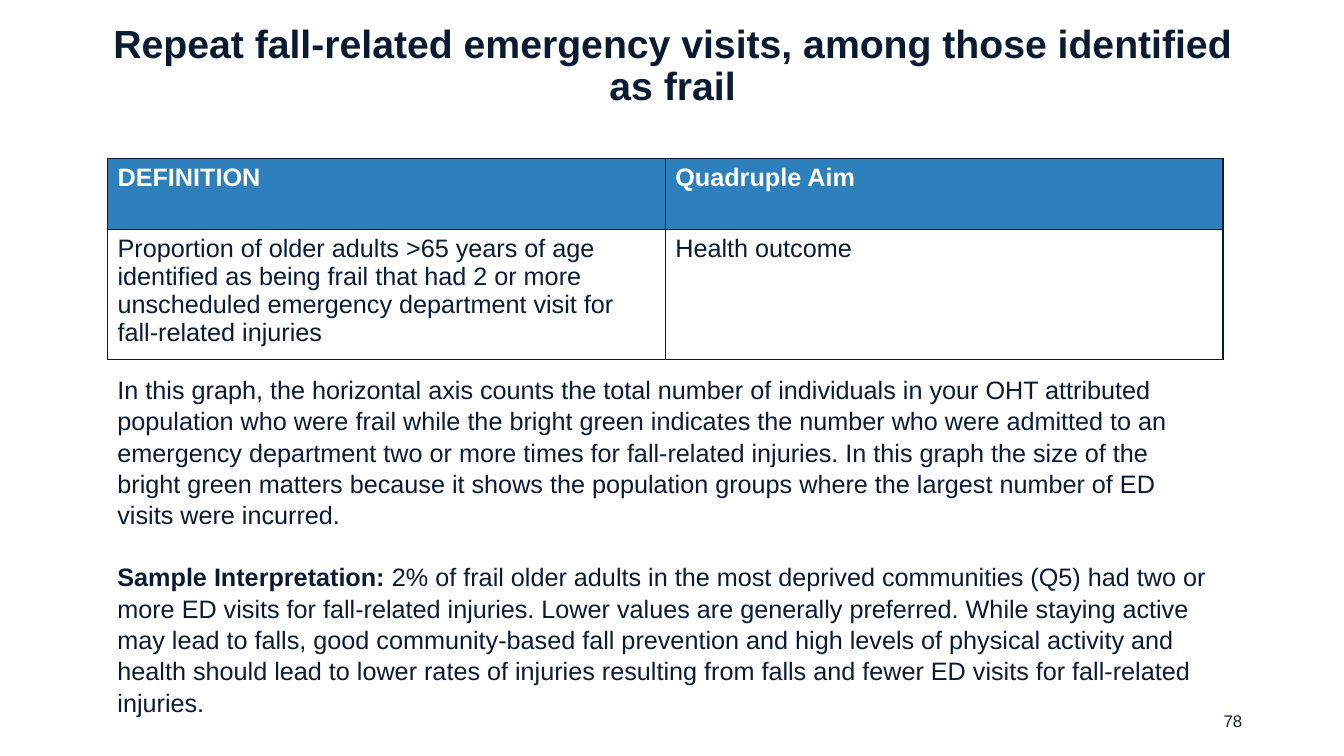
"""Build the slide on repeat fall-related emergency visits among frail older adults."""

import dataclasses
import typing

import lxml.etree
import pptx
import pptx.dml.color
import pptx.enum.text
import pptx.oxml.ns
import pptx.util

SLIDE_WIDTH = pptx.util.Inches(13.33)
SLIDE_HEIGHT = pptx.util.Inches(7.5)
NAVY = "0A1A31"
BLUE = "2E80BC"
WHITE = "FFFFFF"
FONT = "Arial"
BORDER_POINTS = 1
ALIGN = pptx.enum.text.PP_ALIGN
ANCHOR = pptx.enum.text.MSO_ANCHOR


@dataclasses.dataclass(frozen=True)
class Box:
    """A rectangle in percent of the slide's width and height."""

    left: float
    top: float
    width: float
    height: float

    def lengths(self) -> tuple[int, int, int, int]:
        """Return left, top, width and height as slide lengths."""
        return (
            round(SLIDE_WIDTH * self.left / 100),
            round(SLIDE_HEIGHT * self.top / 100),
            round(SLIDE_WIDTH * self.width / 100),
            round(SLIDE_HEIGHT * self.height / 100),
        )


@dataclasses.dataclass(frozen=True)
class Run:
    """A piece of text with one weight."""

    text: str
    bold: bool = False


@dataclasses.dataclass(frozen=True)
class TextStyle:
    """Font size, colour and paragraph format of a block of text."""

    size: float = 18
    color: str = NAVY
    paragraph: dict[str, typing.Any] = dataclasses.field(default_factory=dict)


@dataclasses.dataclass(frozen=True)
class TableRow:
    """A table row with its height in percent of the slide and its look."""

    height: float
    fill: str
    color: str
    bold: bool
    texts: tuple[str, ...]


TITLE_BOX = Box(5.78, 3.2, 88.52, 11.2)
TABLE_BOX = Box(8, 21, 83, 26.53)
BODY_BOX = Box(8, 48.67, 83, 45.73)
NUMBER_BOX = Box(70.67, 92.67, 22.5, 5.33)

TITLE_STYLE = TextStyle(28, paragraph={"alignment": ALIGN.CENTER, "line_spacing": 0.9})
BODY_STYLE = TextStyle(paragraph={"line_spacing": 1.04})
NUMBER_STYLE = TextStyle(12, paragraph={"alignment": ALIGN.RIGHT})
BODY_GAP = 21.6

TITLE = "Repeat fall-related emergency visits, among those identified as frail"
ROWS = (
    TableRow(9.33, BLUE, WHITE, True, ("DEFINITION", "Quadruple Aim")),
    TableRow(17.2, WHITE, NAVY, False, (
        "Proportion of older adults >65 years of age identified as being frail that had "
        "2 or more unscheduled emergency department visit for fall-related injuries",
        "Health outcome",
    )),
)
BODY = (
    (Run(
        "In this graph, the horizontal axis counts the total number of individuals in "
        "your OHT attributed population who were frail while the bright green indicates "
        "the number who were admitted to an emergency department two or more times for "
        "fall-related injuries. In this graph the size of the bright green matters because "
        "it shows the population groups where the largest number of ED visits were incurred."
    ),),
    (
        Run("Sample Interpretation: ", True),
        Run(
            "2% of frail older adults in the most deprived communities (Q5) had two or more "
            "ED visits for fall-related injuries. Lower values are generally preferred. While "
            "staying active may lead to falls, good community-based fall prevention and high "
            "levels of physical activity and health should lead to lower rates of injuries "
            "resulting from falls and fewer ED visits for fall-related injuries."
        ),
    ),
)


def rgb(color: str) -> pptx.dml.color.RGBColor:
    """Turn a hex string into a colour."""
    return pptx.dml.color.RGBColor.from_string(color)


def apply(target: typing.Any, values: dict[str, typing.Any]) -> None:
    """Set every named attribute on the target."""
    for name, value in values.items():
        setattr(target, name, value)


def write(frame: typing.Any, paragraphs: typing.Sequence[typing.Sequence[Run]],
          style: TextStyle, gap: float = 0) -> None:
    """Fill a text frame with paragraphs that are set apart by a gap in points."""
    for index, runs in enumerate(paragraphs):
        paragraph = frame.add_paragraph() if index else frame.paragraphs[0]
        apply(paragraph, style.paragraph)
        paragraph.space_before = pptx.util.Pt(gap if index else 0)
        for part in runs:
            run = paragraph.add_run()
            run.text = part.text
            apply(run.font, {"name": FONT, "size": pptx.util.Pt(style.size), "bold": part.bold})
            run.font.color.rgb = rgb(style.color)


def place(shape: typing.Any, box: Box, anchor: typing.Any) -> None:
    """Move a text shape to its box and set how it holds text."""
    apply(shape, dict(zip(("left", "top", "width", "height"), box.lengths())))
    apply(shape.text_frame, {
        "word_wrap": True,
        "auto_size": pptx.enum.text.MSO_AUTO_SIZE.NONE,
        "vertical_anchor": anchor,
    })


def add_text(slide: typing.Any, box: Box, paragraphs: typing.Sequence[typing.Sequence[Run]],
             style: TextStyle, anchor: typing.Any, gap: float = 0) -> None:
    """Add a text box."""
    shape = slide.shapes.add_textbox(*box.lengths())
    place(shape, box, anchor)
    write(shape.text_frame, paragraphs, style, gap)


def add_borders(cell: typing.Any, color: str) -> None:
    """Draw a solid line on each side of a table cell."""
    name = pptx.oxml.ns.qn
    properties = cell._tc.get_or_add_tcPr()
    for position, side in enumerate(("a:lnL", "a:lnR", "a:lnT", "a:lnB")):
        line = lxml.etree.Element(name(side), w=str(pptx.util.Pt(BORDER_POINTS)))
        fill = lxml.etree.SubElement(line, name("a:solidFill"))
        lxml.etree.SubElement(fill, name("a:srgbClr"), val=color)
        properties.insert(position, line)


def add_definition_table(slide: typing.Any, box: Box, rows: typing.Sequence[TableRow]) -> None:
    """Add the definition table with equal columns."""
    column_count = len(rows[0].texts)
    table = slide.shapes.add_table(len(rows), column_count, *box.lengths()).table
    table.horz_banding = False
    for row_index, row in enumerate(rows):
        table.rows[row_index].height = round(SLIDE_HEIGHT * row.height / 100)
        for column_index, text in enumerate(row.texts):
            cell = table.cell(row_index, column_index)
            cell.fill.solid()
            cell.fill.fore_color.rgb = rgb(row.fill)
            add_borders(cell, NAVY)
            write(cell.text_frame, [[Run(text, row.bold)]], TextStyle(color=row.color))


def main() -> None:
    """Build and save the presentation."""
    presentation = pptx.Presentation()
    apply(presentation, {"slide_width": SLIDE_WIDTH, "slide_height": SLIDE_HEIGHT})
    slide = presentation.slides.add_slide(presentation.slide_layouts.get_by_name("Title Only"))
    place(slide.shapes.title, TITLE_BOX, ANCHOR.MIDDLE)
    write(slide.shapes.title.text_frame, [[Run(TITLE, True)]], TITLE_STYLE)
    add_definition_table(slide, TABLE_BOX, ROWS)
    add_text(slide, BODY_BOX, BODY, BODY_STYLE, ANCHOR.TOP, BODY_GAP)
    add_text(slide, NUMBER_BOX, [[Run("78")]], NUMBER_STYLE, ANCHOR.MIDDLE)
    presentation.save("out.pptx")


if __name__ == "__main__":
    main()
